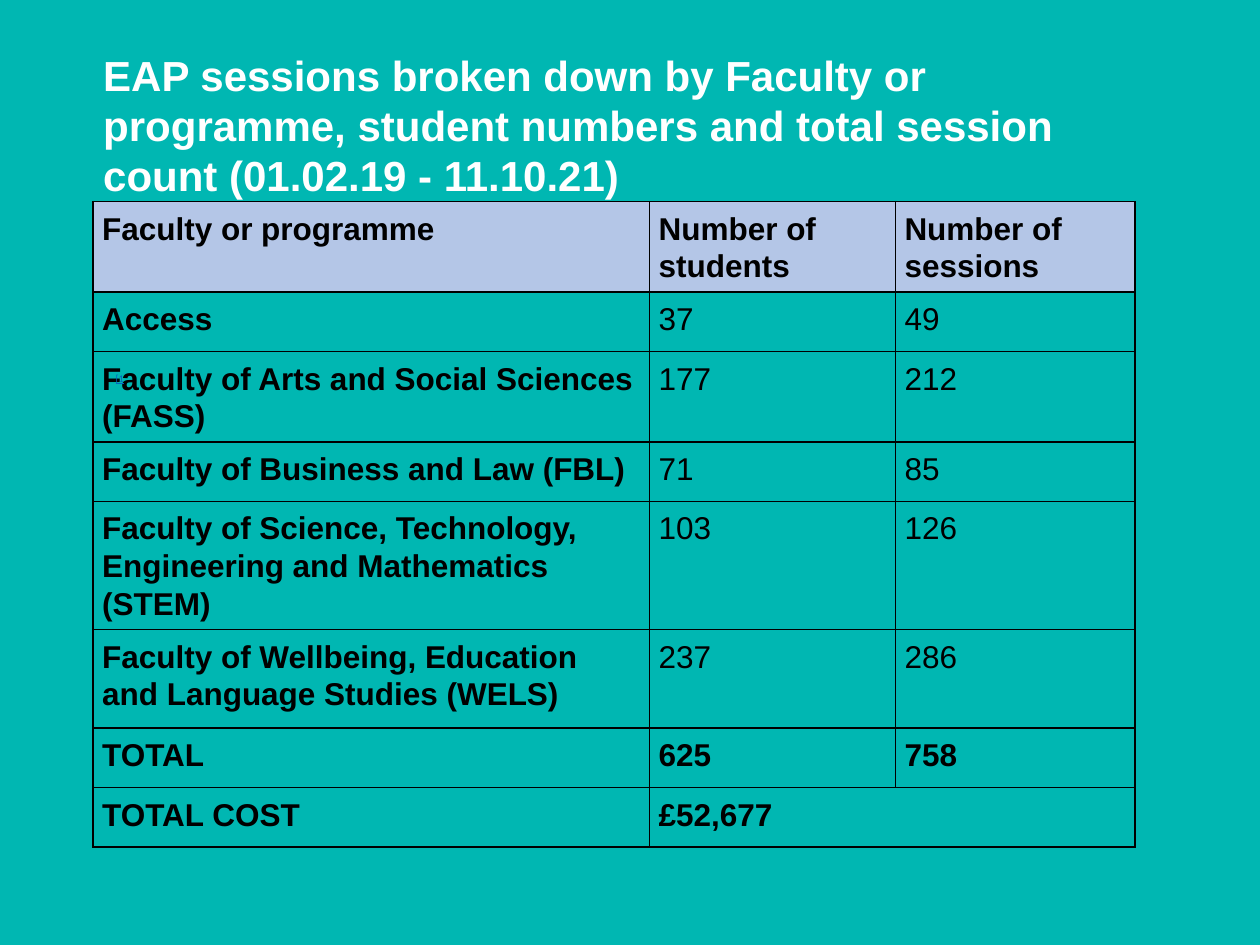
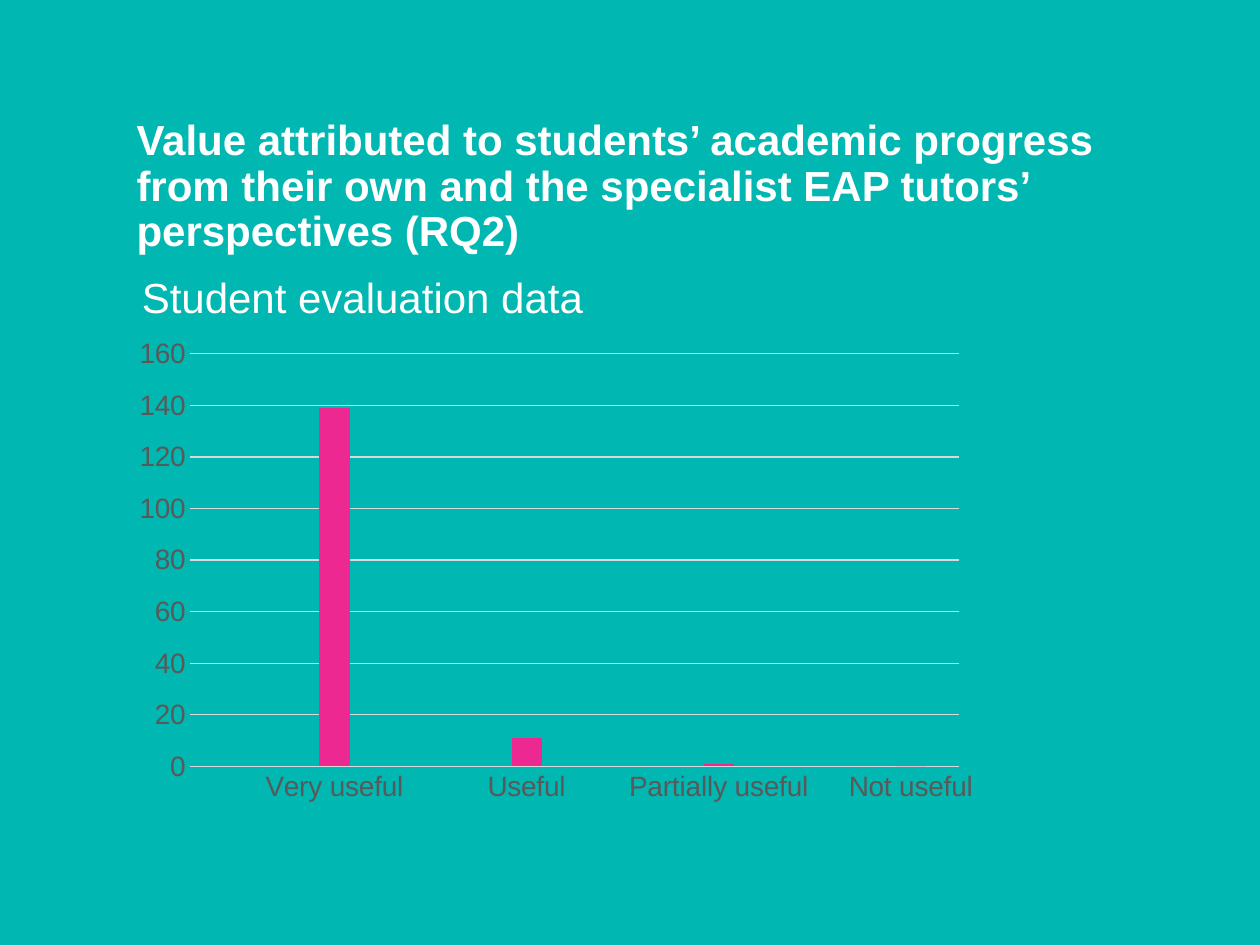
import pptx
import pptx.chart.data
import pptx.dml.color
import pptx.enum.chart
import pptx.enum.text
import pptx.oxml
import pptx.oxml.ns
import pptx.util

Pt = pptx.util.Pt

COLORS = {
    "background": "00B7B2",
    "light": "FFFFFF",
    "dark": "000000",
    "header": "B4C6E7",
    "note": "0563C1",
    "bar": "ED2891",
    "axis": "595959",
    "grid": "D9D9D9",
}

# Text formats
TITLE = {"name": "Arial", "size": Pt(24), "bold": True}
SUBTITLE = {**TITLE, "bold": False}
CELL = {"name": "Arial", "size": Pt(18), "bold": False}
CELL_BOLD = {**CELL, "bold": True}
NOTE = {"name": "Calibri", "size": Pt(10), "underline": True}
AXIS = {"name": "Arial", "size": Pt(16), "bold": False}

# Paragraph formats
HEADING = {"alignment": pptx.enum.text.PP_ALIGN.LEFT, "space_before": Pt(0)}
SINGLE = {**HEADING, "line_spacing": 1.0}
TIGHT = {**HEADING, "line_spacing": 0.9}
LOOSE = {**HEADING, "line_spacing": 1.07, "space_after": Pt(8)}

NO_MARGINS = {"margin_left": 0, "margin_top": 0, "margin_right": 0, "margin_bottom": 0}

COLUMN_WIDTHS = [318, 140.5, 137]
FACULTY_ROWS = [
    (51.4, ["Faculty or programme", "Number of students", "Number of sessions"]),
    (34, ["Access", "37", "49"]),
    (51.4, ["Faculty of Arts and Social Sciences (FASS)", "177", "212"]),
    (34, ["Faculty of Business and Law (FBL)", "71", "85"]),
    (73, ["Faculty of Science, Technology, Engineering and Mathematics (STEM)", "103", "126"]),
    (56.4, ["Faculty of Wellbeing, Education and Language Studies (WELS)", "237", "286"]),
    (34, ["TOTAL", "625", "758"]),
    (34, ["TOTAL COST", "£52,677", ""]),
]
RATINGS = {"Very useful": 139, "Useful": 11, "Partially useful": 1, "Not useful": 0}


def rgb(color):
    return pptx.dml.color.RGBColor.from_string(COLORS[color])


def apply(target, formats):
    for attribute, value in formats.items():
        setattr(target, attribute, value)


def format_font(font, formats, color):
    apply(font, formats)
    font.color.rgb = rgb(color)


def write(text_frame, text, formats, color, paragraph_formats):
    paragraph = text_frame.paragraphs[0]
    apply(paragraph, paragraph_formats)
    run = paragraph.add_run()
    run.text = text
    format_font(run.font, formats, color)
    return run


def place_heading(shape, box, text, formats, paragraph_formats):
    apply(shape, dict(zip(("left", "top", "width", "height"), map(Pt, box))))
    apply(shape.text_frame, {
        **NO_MARGINS,
        "word_wrap": True,
        "auto_size": pptx.enum.text.MSO_AUTO_SIZE.NONE,
        "vertical_anchor": pptx.enum.text.MSO_ANCHOR.TOP,
    })
    write(shape.text_frame, text, formats, "light", paragraph_formats)


def add_borders(cell):
    properties = cell._tc.get_or_add_tcPr()
    for side in ("lnL", "lnR", "lnT", "lnB"):
        properties.append(pptx.oxml.parse_xml(
            f'<a:{side} {pptx.oxml.ns.nsdecls("a")} w="12700"><a:solidFill>'
            f'<a:srgbClr val="{COLORS["dark"]}"/></a:solidFill></a:{side}>'))


def add_faculty_table(slide, box):
    table = slide.shapes.add_table(
        len(FACULTY_ROWS), len(COLUMN_WIDTHS), *map(Pt, box)).table
    for column, width in zip(table.columns, COLUMN_WIDTHS):
        column.width = Pt(width)
    last_row = len(FACULTY_ROWS) - 1
    table.cell(last_row, 1).merge(table.cell(last_row, 2))

    for row_index, (height, texts) in enumerate(FACULTY_ROWS):
        table.rows[row_index].height = Pt(height)
        in_bold_row = row_index == 0 or texts[0].startswith("TOTAL")
        for column_index, text in enumerate(texts):
            cell = table.cell(row_index, column_index)
            apply(cell, {"margin_left": Pt(5.2), "margin_right": Pt(5),
                         "margin_top": Pt(4.3), "margin_bottom": Pt(4.3)})
            add_borders(cell)
            if row_index == 0:
                cell.fill.solid()
                cell.fill.fore_color.rgb = rgb("header")
            else:
                cell.fill.background()
            if text:
                formats = CELL_BOLD if in_bold_row or column_index == 0 else CELL
                write(cell.text_frame, text, formats, "dark", LOOSE)


def add_reference_mark(slide, box):
    text_box = slide.shapes.add_textbox(*map(Pt, box))
    apply(text_box.text_frame, {
        "word_wrap": True, "vertical_anchor": pptx.enum.text.MSO_ANCHOR.MIDDLE})
    run = write(text_box.text_frame, "[1", NOTE, "note", HEADING)
    run.font._element.set("baseline", "30000")


def add_ratings_chart(slide, box):
    # A blank category goes before each rating
    data = pptx.chart.data.CategoryChartData()
    data.categories = [label for rating in RATINGS for label in ("", rating)]
    data.add_series("Series 1", [value for count in RATINGS.values() for value in (None, count)])
    chart = slide.shapes.add_chart(
        pptx.enum.chart.XL_CHART_TYPE.COLUMN_CLUSTERED, *map(Pt, box), data).chart
    apply(chart, {"has_legend": False, "has_title": False})
    format_font(chart.font, AXIS, "dark")

    # Columns
    plot = chart.plots[0]
    apply(plot, {"gap_width": 219, "overlap": -27, "vary_by_categories": False})
    series_fill = plot.series[0].format.fill
    series_fill.solid()
    series_fill.fore_color.rgb = rgb("bar")

    # Axes and grid
    for axis in (chart.category_axis, chart.value_axis):
        axis.major_tick_mark = pptx.enum.chart.XL_TICK_MARK.NONE
        format_font(axis.tick_labels.font, AXIS, "axis")
    apply(chart.value_axis, {"minimum_scale": 0, "maximum_scale": 160,
                             "major_unit": 20, "has_major_gridlines": True})
    chart.value_axis.format.line.fill.background()
    for line in (chart.category_axis.format.line,
                 chart.value_axis.major_gridlines.format.line):
        line.width = Pt(0.75)
        line.color.rgb = rgb("grid")


def build_sessions_slide(presentation):
    slide = presentation.slides.add_slide(presentation.slide_layouts[5])
    place_heading(
        slide.shapes.title, (59, 28, 584, 87),
        "EAP sessions broken down by Faculty or programme, student numbers "
        "and total session count (01.02.19 - 11.10.21)", TITLE, SINGLE)
    add_faculty_table(slide, (53.2, 115.2, 595.5, 368.2))
    add_reference_mark(slide, (59, 208, 60, 19.5))


def build_evaluation_slide(presentation):
    slide = presentation.slides.add_slide(presentation.slide_layouts[0])
    place_heading(
        slide.shapes.title, (78, 68.2, 564, 80),
        "Value attributed to students’ academic progress from their own and "
        "the specialist EAP tutors’ perspectives (RQ2)", TITLE, TIGHT)
    place_heading(slide.placeholders[1], (81, 153, 580, 35),
                  "Student evaluation data", SUBTITLE, LOOSE)
    add_ratings_chart(slide, (70.8, 188, 496, 275.6))


def main():
    presentation = pptx.Presentation()
    presentation.slide_width = Pt(720)
    presentation.slide_height = Pt(540)
    background = presentation.slide_master.background.fill
    background.solid()
    background.fore_color.rgb = rgb("background")
    build_sessions_slide(presentation)
    build_evaluation_slide(presentation)
    presentation.save("out.pptx")


if __name__ == "__main__":
    main()
